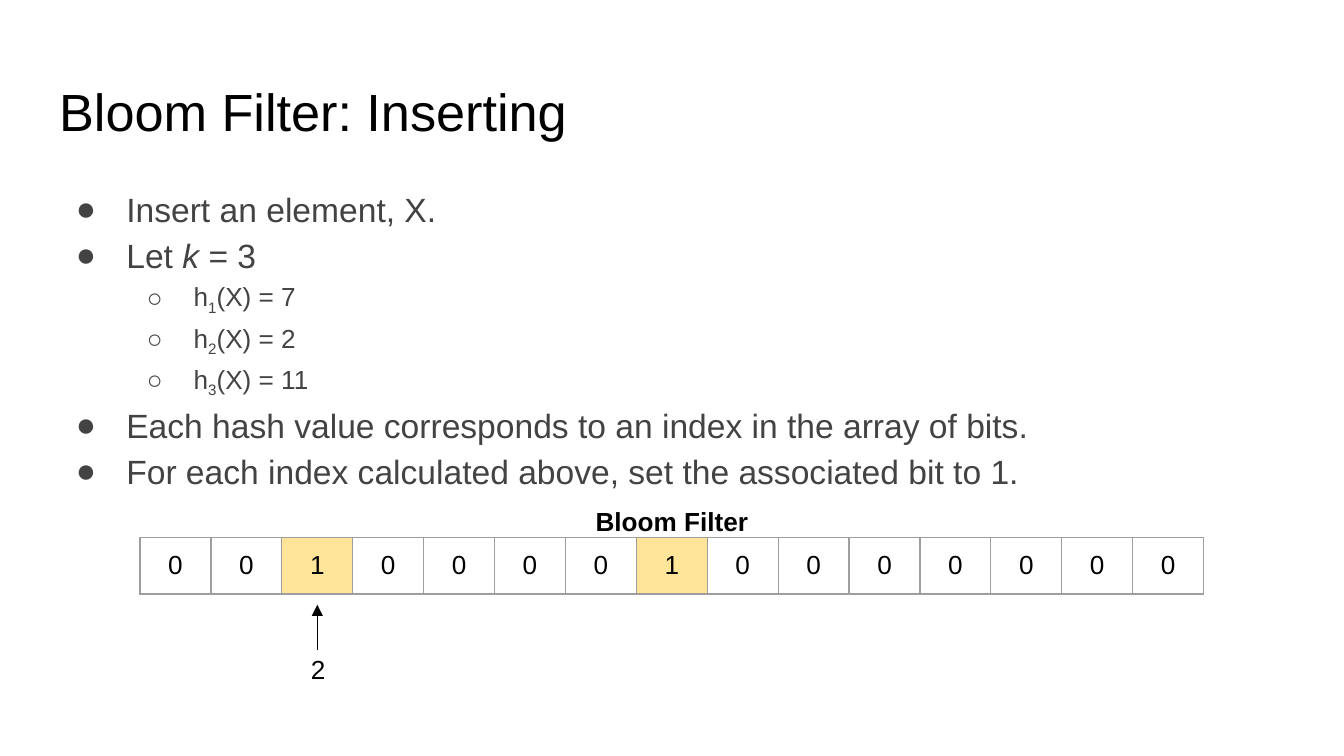
from dataclasses import dataclass

from lxml import etree
from pptx import Presentation
from pptx.dml.color import RGBColor
from pptx.enum import shapes, text
from pptx.oxml import ns
from pptx.util import Pt


@dataclass(frozen=True)
class Theme:
    font: str = "Arial"
    ink: str = "000000"
    body: str = "434343"
    grid: str = "9E9E9E"
    highlight: str = "FFE599"
    title_size: int = 28
    body_size: int = 18
    small_size: int = 14
    inset: float = 7.2
    stroke: float = 0.75


def add_element(parent, tag, **attributes):
    return etree.SubElement(parent, ns.qn(tag), attributes)


class SlideBuilder:
    def __init__(self, deck, theme):
        self.theme = theme
        self.page = deck.slides.add_slide(deck.slide_layouts[1])

    def place(self, box, left, top, width, height):
        box.left, box.top = Pt(left), Pt(top)
        box.width, box.height = Pt(width), Pt(height)

    def frame(self, box):
        frame = box.text_frame
        inset = Pt(self.theme.inset)
        frame.margin_left = frame.margin_right = inset
        frame.margin_top = frame.margin_bottom = inset
        frame.word_wrap = True
        frame.auto_size = text.MSO_AUTO_SIZE.NONE
        frame.vertical_anchor = text.MSO_ANCHOR.TOP
        return frame

    def style(self, para, size, color, align=text.PP_ALIGN.LEFT, bold=False):
        para.alignment = align
        for span in para.runs:
            span.font.name = self.theme.font
            span.font.size = Pt(size)
            span.font.bold = bold
            span.font.color.rgb = RGBColor.from_string(color)

    def title(self, words, *area):
        box = self.page.shapes.title
        self.place(box, *area)
        frame = self.frame(box)
        frame.text = words
        self.style(frame.paragraphs[0], self.theme.title_size, self.theme.ink)

    def bullets(self, items, *area):
        box = self.page.placeholders[1]
        self.place(box, *area)
        frame = self.frame(box)
        for index, (level, spans) in enumerate(items):
            para = frame.paragraphs[0] if index == 0 else frame.add_paragraph()
            for words, kind in spans:
                span = para.add_run()
                span.text = words
                if kind == "italic":
                    span.font.italic = True
                elif kind == "subscript":
                    span._r.get_or_add_rPr().set("baseline", "-25000")
            size = self.theme.small_size if level else self.theme.body_size
            self.style(para, size, self.theme.body)
            self.bullet(para, level)

    def bullet(self, para, level):
        para.level = level
        para.line_spacing = 1.15
        para.space_before = para.space_after = Pt(0)
        properties = para._p.get_or_add_pPr()
        properties.set("marL", str(Pt(36 * (level + 1))))
        properties.set("indent", str(-Pt(25 if level else 27)))
        color = add_element(properties, "a:buClr")
        add_element(color, "a:srgbClr", val=self.theme.body)
        add_element(properties, "a:buFont", typeface=self.theme.font)
        add_element(properties, "a:buChar", char="●○"[level])

    def label(self, words, *area, bold=False):
        frame = self.frame(self.page.shapes.add_textbox(*map(Pt, area)))
        frame.text = words
        self.style(frame.paragraphs[0], self.theme.small_size, self.theme.ink,
                   text.PP_ALIGN.CENTER, bold)

    def bit_array(self, bits, left, top, cell_width, height):
        width = cell_width * len(bits)
        table = self.page.shapes.add_table(
            1, len(bits), Pt(left), Pt(top), Pt(width), Pt(height)).table
        table.first_row = table.horz_banding = False
        for column, bit in enumerate(bits):
            table.columns[column].width = Pt(cell_width)
            cell = table.cell(0, column)
            inset = Pt(self.theme.inset)
            cell.margin_left = cell.margin_right = inset
            cell.margin_top = cell.margin_bottom = inset
            cell.text = str(bit)
            self.style(cell.text_frame.paragraphs[0], self.theme.small_size,
                       self.theme.ink, text.PP_ALIGN.CENTER)
            self.borders(cell)
            if bit:
                cell.fill.solid()
                cell.fill.fore_color.rgb = RGBColor.from_string(self.theme.highlight)
            else:
                cell.fill.background()

    def borders(self, cell):
        properties = cell._tc.get_or_add_tcPr()
        for side in "LRTB":
            line = add_element(properties, f"a:ln{side}", w=str(Pt(self.theme.stroke)))
            fill = add_element(line, "a:solidFill")
            add_element(fill, "a:srgbClr", val=self.theme.grid)

    def arrow(self, *points):
        connector = self.page.shapes.add_connector(
            shapes.MSO_CONNECTOR.STRAIGHT, *map(Pt, points))
        connector.line.width = Pt(self.theme.stroke)
        connector.line.color.rgb = RGBColor.from_string(self.theme.ink)
        add_element(connector.line._get_or_add_ln(), "a:tailEnd", type="triangle")
        add_element(connector._element.spPr, "a:effectLst")


def plain(words):
    return 0, [(words, None)]


def hash_value(number, value):
    return 1, [("h", None), (str(number), "subscript"), (f"(X) = {value}", None)]


def main():
    deck = Presentation()
    deck.slide_width, deck.slide_height = Pt(720), Pt(405)
    slide = SlideBuilder(deck, Theme())

    slide.title("Bloom Filter: Inserting", 24.5, 35, 671, 45)
    hashes = [7, 2, 11]
    slide.bullets([
        plain("Insert an element, X."),
        (0, [("Let ", None), ("k", "italic"), (" = 3", None)]),
        *(hash_value(number, value) for number, value in enumerate(hashes, 1)),
        plain("Each hash value corresponds to an index in the array of bits."),
        plain("For each index calculated above, set the associated bit to 1."),
    ], 24.5, 90.75, 671, 118)

    left, cell_width, bit_count = 75, 38, 15
    inserted = hashes[:2]
    current = inserted[-1]
    bits = [int(index in inserted) for index in range(bit_count)]
    slide.bit_array(bits, left, 288, cell_width, 30.25)
    slide.label("Bloom Filter", 296.5, 263.5, 127, 31, bold=True)

    center = left + cell_width * (current + 0.5)
    slide.arrow(center, 348, center, 324)
    slide.label(str(current), center - 10.5, 343, 21, 27)

    deck.save("out.pptx")


if __name__ == "__main__":
    main()
